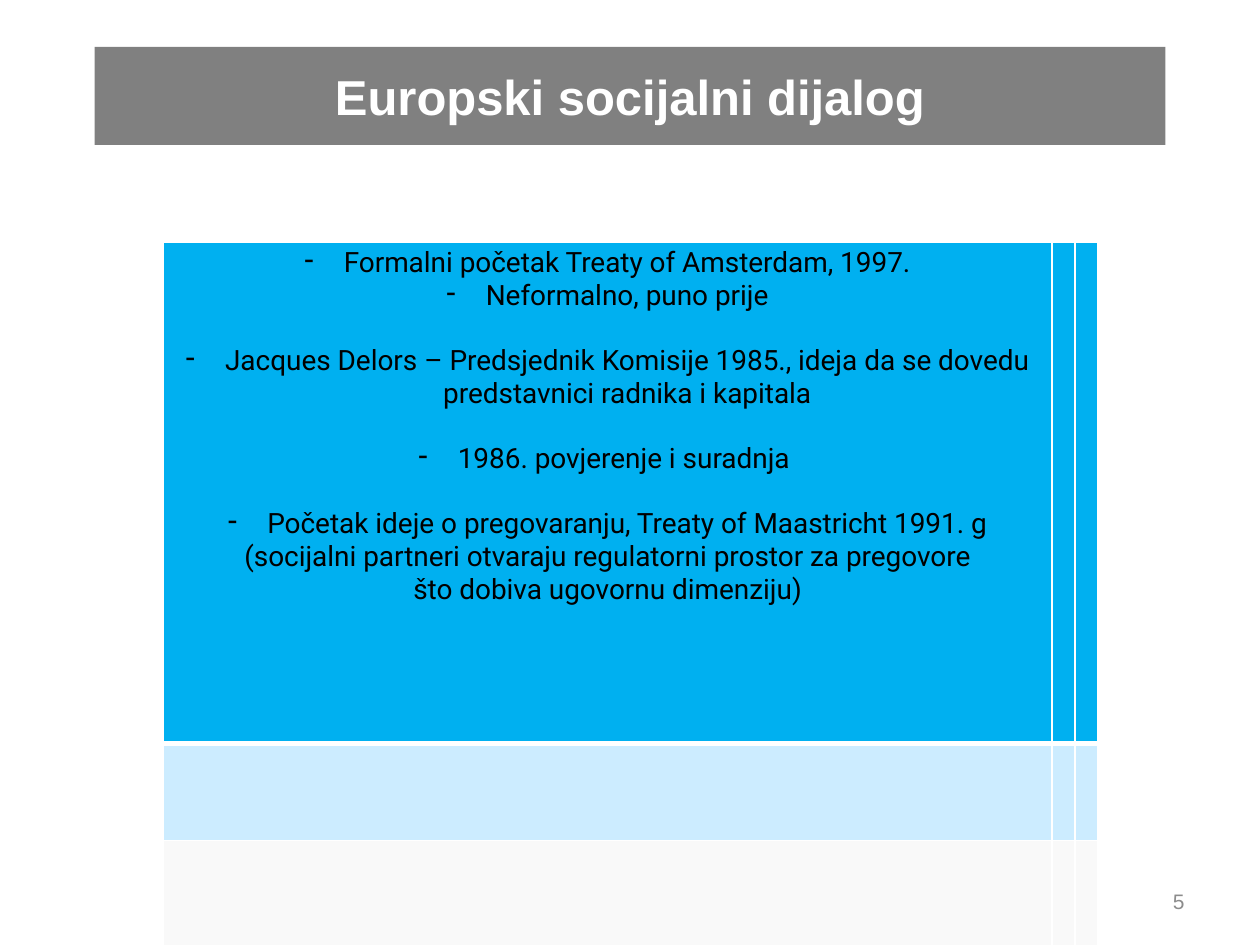
from lxml.etree import SubElement
from pptx import Presentation
from pptx.dml.color import RGBColor
from pptx.enum.text import MSO_ANCHOR, MSO_AUTO_SIZE, PP_ALIGN
from pptx.oxml.ns import qn
from pptx.util import Pt

TITLE = "Europski socijalni dijalog"
PAGE = "5"
# text, dash bullet, gap above
POINTS = [
    ("Formalni početak Treaty of Amsterdam, 1997.", True, False),
    ("Neformalno, puno prije", True, False),
    ("Jacques Delors – Predsjednik Komisije 1985., ideja da se dovedu "
     "predstavnici radnika i kapitala", True, True),
    ("1986. povjerenje i suradnja ", True, True),
    ("Početak ideje o pregovaranju, Treaty of Maastricht 1991. g", True, True),
    ("(socijalni partneri otvaraju regulatorni prostor za pregovore", False, False),
    ("što dobiva ugovornu dimenziju)", False, False),
]
COLS = [508, 13.2, 13.2]
ROWS = [(286.5, "00B0F0"), (55.6, "CCECFF"), (80, "F9F9F9"), (55.6, "CCECFF")]
LINE_HEIGHT = 18.75
INDENT = 22.5


def rgb(value):
    return RGBColor.from_string(value)


def add_run(p, text, size, font, color, bold=False):
    r = p.add_run()
    r.text = text
    r.font.size, r.font.name, r.font.bold = Pt(size), font, bold
    r.font.color.rgb = rgb(color)


def set_borders(cell, bottom):
    tc_pr = cell._tc.get_or_add_tcPr()
    for side, width in (("L", 1), ("R", 1), ("T", 1), ("B", bottom)):
        ln = SubElement(tc_pr, qn(f"a:ln{side}"), w=str(Pt(width)))
        fill = SubElement(ln, qn("a:solidFill"))
        SubElement(fill, qn("a:srgbClr"), val="FFFFFF")


def add_dash(p):
    p_pr = p._p.get_or_add_pPr()
    p_pr.set("marL", str(Pt(INDENT)))
    p_pr.set("indent", str(-Pt(INDENT)))
    SubElement(p_pr, qn("a:buChar"), char="-")


prs = Presentation()
prs.slide_width, prs.slide_height = Pt(720), Pt(540)
s = prs.slides.add_slide(prs.slide_layouts[5])

title = s.shapes.title
title.left, title.top, title.width, title.height = Pt(54), Pt(26.8), Pt(612), Pt(56)
title.fill.solid()
title.fill.fore_color.rgb = rgb("808080")
tf = title.text_frame
tf.auto_size = MSO_AUTO_SIZE.NONE
tf.vertical_anchor = MSO_ANCHOR.MIDDLE
p = tf.paragraphs[0]
p.alignment = PP_ALIGN.CENTER
add_run(p, TITLE, 28, "Arial", "FFFFFF", True)

table = s.shapes.add_table(len(ROWS), len(COLS), Pt(93.2), Pt(138.2), Pt(sum(COLS)),
                           Pt(sum(height for height, _ in ROWS))).table
for col, width in zip(table.columns, COLS):
    col.width = Pt(width)
for i, (row, (height, color)) in enumerate(zip(table.rows, ROWS)):
    row.height = Pt(height)
    for cell in row.cells:
        cell.margin_left = cell.margin_right = Pt(5)
        cell.margin_top = cell.margin_bottom = Pt(3)
        set_borders(cell, 3 if i == 0 else 1)
        cell.fill.solid()
        cell.fill.fore_color.rgb = rgb(color)

tf = table.cell(0, 0).text_frame
for i, (text, dash, gap) in enumerate(POINTS):
    p = tf.add_paragraph() if i else tf.paragraphs[0]
    p.alignment = PP_ALIGN.CENTER
    p.space_before = Pt(LINE_HEIGHT if gap else 0)
    if dash:
        add_dash(p)
    add_run(p, text, 16, "Roboto", "000000")

number = s.shapes.add_textbox(Pt(516), Pt(500.5), Pt(168), Pt(28.8))
tf = number.text_frame
tf.word_wrap = True
tf.vertical_anchor = MSO_ANCHOR.MIDDLE
p = tf.paragraphs[0]
p.alignment = PP_ALIGN.RIGHT
add_run(p, PAGE, 12, "Arial", "8C8C8C")

prs.save("out.pptx")
